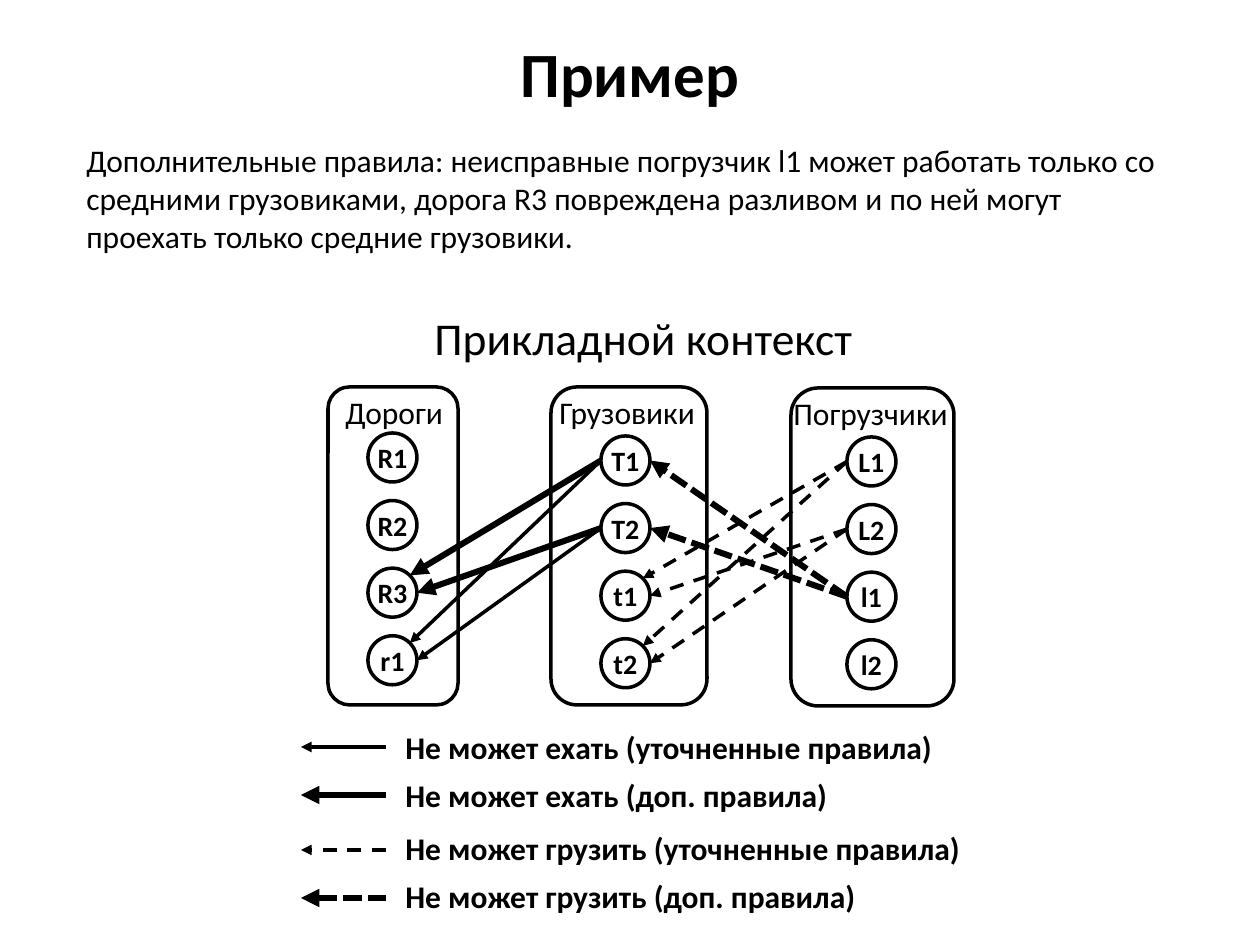
from dataclasses import dataclass
from math import cos, radians, sin

from lxml.etree import SubElement
from pptx import Presentation
from pptx.dml.color import RGBColor
from pptx.enum.dml import MSO_LINE
from pptx.enum.shapes import MSO_CONNECTOR, MSO_SHAPE
from pptx.enum.text import MSO_ANCHOR, MSO_AUTO_SIZE, PP_ALIGN
from pptx.oxml.ns import qn
from pptx.util import Emu, Pt

PX_PER_INCH = 126


def px(value):
    return Emu(round(value * 914400 / PX_PER_INCH))


@dataclass(frozen=True)
class Theme:
    font: str = "Calibri"
    ink: RGBColor = RGBColor(0, 0, 0)
    paper: RGBColor = RGBColor(255, 255, 255)
    title: float = 36
    heading: float = 26
    body: float = 18
    node: float = 16
    thin: float = 2
    thick: float = 3.5


THEME = Theme()


def write(frame, text, size=THEME.body, bold=False, align=PP_ALIGN.LEFT, before=0):
    para = frame.paragraphs[0]
    para.alignment = align
    para.space_before = Pt(before)
    span = para.add_run()
    span.text = text
    span.font.name = THEME.font
    span.font.size = Pt(size)
    span.font.bold = bold
    span.font.color.rgb = THEME.ink


class SlideBuilder:
    def __init__(self, page, theme):
        self.page = page
        self.theme = theme

    def title(self, text, left, top, width, height):
        box = self.page.shapes.title
        box.left, box.top, box.width, box.height = map(px, (left, top, width, height))
        box.text_frame.vertical_anchor = MSO_ANCHOR.MIDDLE
        write(box.text_frame, text, size=self.theme.title, bold=True, align=PP_ALIGN.CENTER)

    def text(self, text, left, top, width, height, parent=None, wrap=True, **style):
        shapes = (parent or self.page).shapes
        box = shapes.add_textbox(*map(px, (left, top, width, height)))
        box.text_frame.word_wrap = wrap
        box.text_frame.auto_size = MSO_AUTO_SIZE.SHAPE_TO_FIT_TEXT
        write(box.text_frame, text, **style)

    def outline(self, group, kind, left, top, width, height):
        shape = group.shapes.add_shape(kind, *map(px, (left, top, width, height)))
        shape.shadow.inherit = False
        shape.fill.solid()
        shape.fill.fore_color.rgb = self.theme.paper
        shape.line.color.rgb = self.theme.ink
        shape.line.width = Pt(self.theme.thin)
        return shape

    def node(self, group, name, left, top, size):
        circle = self.outline(group, MSO_SHAPE.OVAL, left, top, size, size)
        frame = circle.text_frame
        frame.margin_left = frame.margin_right = frame.margin_top = frame.margin_bottom = 0
        frame.vertical_anchor = MSO_ANCHOR.MIDDLE
        frame.word_wrap = False
        write(frame, name, size=self.theme.node, bold=True, align=PP_ALIGN.CENTER)

    def arrow(self, start, end, width, dash=None):
        line = self.page.shapes.add_connector(MSO_CONNECTOR.STRAIGHT, *map(px, (*start, *end)))
        line.line.color.rgb = self.theme.ink
        line.line.width = Pt(width)
        if dash:
            line.line.dash_style = dash
        SubElement(line.line._get_or_add_ln(), qn("a:tailEnd"), type="triangle")
        SubElement(line._element.spPr, qn("a:effectLst"))


NODE_SIZE = 49
NODE_PITCH = 67.6
LEFT, RIGHT, UPPER_RIGHT = 180, 0, 45

DRIVE = (THEME.thin, None)
DRIVE_EXTRA = (THEME.thick, None)
LOAD = (THEME.thin, MSO_LINE.DASH)
LOAD_EXTRA = (THEME.thick, MSO_LINE.SQUARE_DOT)

COLUMNS = [
    ("Дороги", (328, 387, 130, 318), (333, 125), (368, 433), ("R1", "R2", "R3", "r1")),
    ("Грузовики", (551, 387, 156, 318), (547, 163), (601, 436), ("T1", "T2", "t1", "t2")),
    ("Погрузчики", (791, 388, 163, 318), (781, 181), (847, 437), ("L1", "L2", "l1", "l2")),
]

LINKS = [
    ("T1", "r1", UPPER_RIGHT, DRIVE),
    ("T2", "r1", RIGHT, DRIVE),
    ("L1", "t1", UPPER_RIGHT, LOAD),
    ("L1", "t2", UPPER_RIGHT, LOAD),
    ("L2", "t1", RIGHT, LOAD),
    ("L2", "t2", RIGHT, LOAD),
    ("T1", "R3", UPPER_RIGHT, DRIVE_EXTRA),
    ("T2", "R3", RIGHT, DRIVE_EXTRA),
    ("l1", "T1", RIGHT, LOAD_EXTRA),
    ("l1", "T2", RIGHT, LOAD_EXTRA),
]

LEGEND = [
    ("Не может ехать (уточненные правила)", 747, 722, 562, DRIVE),
    ("Не может ехать (доп. правила)", 795, 770, 451, DRIVE_EXTRA),
    ("Не может грузить (уточненные правила)", 850, 823, 590, LOAD),
    ("Не может грузить (доп. правила)", 898, 871, 479, LOAD_EXTRA),
]


def rim_point(center, degrees):
    angle = radians(degrees)
    radius = NODE_SIZE / 2
    return center[0] + radius * cos(angle), center[1] - radius * sin(angle)


def main():
    deck = Presentation()
    deck.slide_width, deck.slide_height = px(1260), px(945)
    page = deck.slides.add_slide(deck.slide_layouts[5])
    builder = SlideBuilder(page, THEME)

    builder.title("Пример", 63, -6, 1134, 157)
    builder.text(
        "Дополнительные правила: неисправные погрузчик l1 может работать только со "
        "средними грузовиками, дорога R3 повреждена разливом и по ней могут "
        "проехать только средние грузовики.",
        74, 135, 1123, 127,
    )
    builder.text("Прикладной контекст", 422, 304, 457, 64, size=THEME.heading, before=5)

    centers = {}
    for label, frame, (label_left, label_width), (left, top), names in COLUMNS:
        group = page.shapes.add_group_shape()
        builder.outline(group, MSO_SHAPE.ROUNDED_RECTANGLE, *frame)
        builder.text(label, label_left, frame[1], label_width, 50, parent=group, wrap=False)
        for row, name in enumerate(names):
            node_top = top + row * NODE_PITCH
            builder.node(group, name, left, node_top, NODE_SIZE)
            centers[name] = (left + NODE_SIZE / 2, node_top + NODE_SIZE / 2)

    for source, target, side, style in LINKS:
        builder.arrow(rim_point(centers[source], LEFT), rim_point(centers[target], side), *style)

    for label, line_y, text_top, width, style in LEGEND:
        builder.arrow((386, line_y), (301, line_y), *style)
        builder.text(label, 393, text_top, width, 50, bold=True)

    deck.save("out.pptx")


if __name__ == "__main__":
    main()
